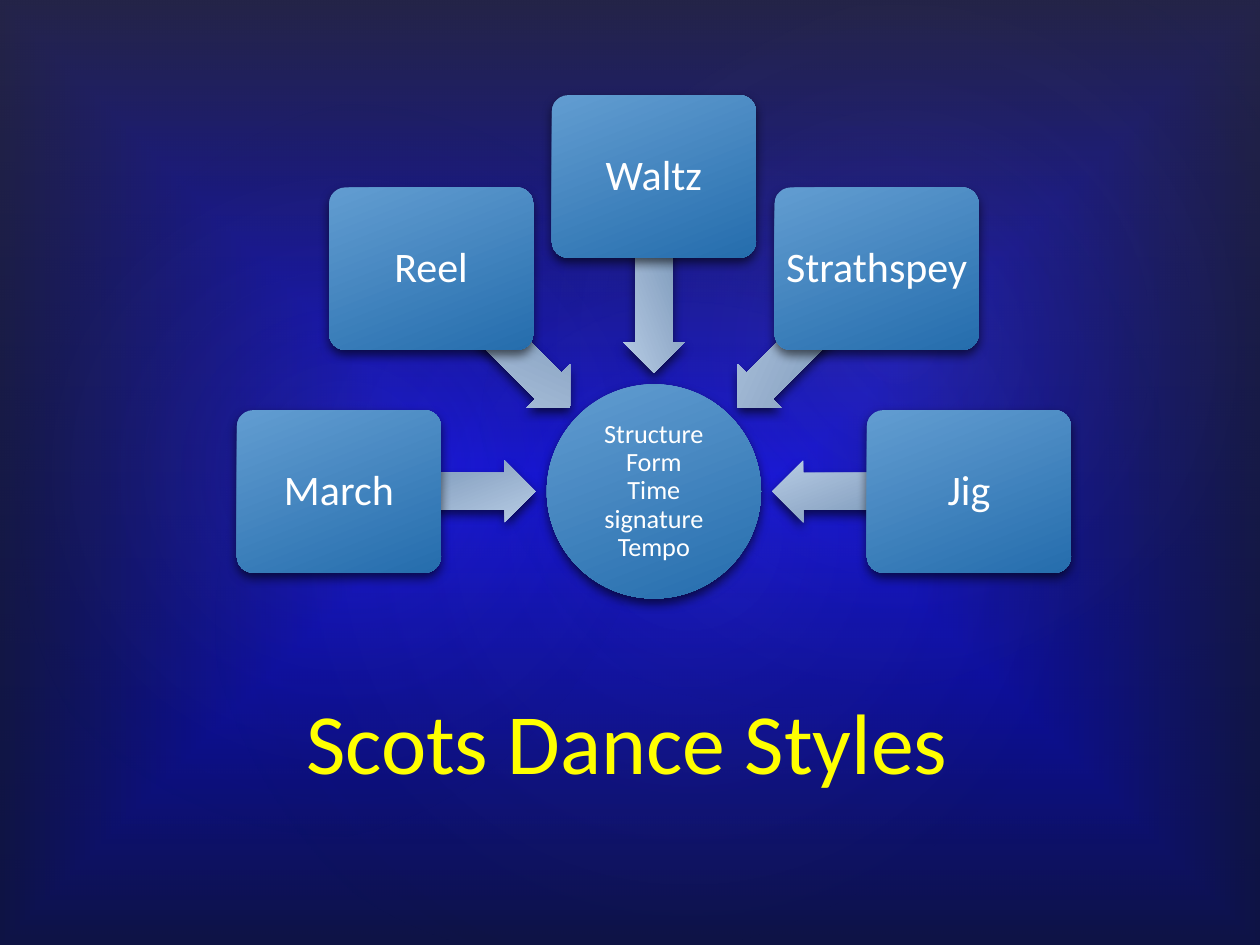
from math import cos, radians, sin

from lxml.etree import SubElement
from pptx import Presentation
from pptx.dml.color import RGBColor
from pptx.enum.shapes import MSO_SHAPE
from pptx.enum.text import MSO_ANCHOR, MSO_AUTO_SIZE, PP_ALIGN
from pptx.oxml import parse_xml
from pptx.oxml.ns import nsdecls, qn
from pptx.util import Inches, Pt

WHITE = RGBColor(0xFF, 0xFF, 0xFF)
YELLOW = RGBColor(0xFF, 0xFF, 0x00)
BLUE = RGBColor(0x00, 0x00, 0xFF)
NAVY = RGBColor(0x0C, 0x11, 0x43)
SLATE = RGBColor(0x24, 0x28, 0x52)
BROWN = RGBColor(0x50, 0x46, 0x52)
GLOW = RGBColor(0xC4, 0xBC, 0xC6)
BOX_LIGHT = RGBColor(0x62, 0x9D, 0xD1)
BOX_DARK = RGBColor(0x25, 0x6D, 0xAD)
ARROW_LIGHT = RGBColor(0xB7, 0xCC, 0xE5)
ARROW_DARK = RGBColor(0x6C, 0x8A, 0xAD)


def set_gradient(fill, parent, stops, angle=None, path=None):
    fill.solid()
    gs = "".join(
        f'<a:gs pos="{pos * 1000}"><a:srgbClr val="{color}">'
        f'<a:alpha val="{alpha * 1000}"/></a:srgbClr></a:gs>'
        for pos, color, alpha in stops
    )
    if path:
        kind = (f'<a:path path="{path}"><a:fillToRect l="50000" t="50000" '
                'r="50000" b="50000"/></a:path>')
    else:
        kind = f'<a:lin ang="{angle * 60000}" scaled="0"/>'
    grad = parse_xml(f'<a:gradFill {nsdecls("a")} rotWithShape="1">'
                     f'<a:gsLst>{gs}</a:gsLst>{kind}</a:gradFill>')
    parent.replace(parent.find(qn("a:solidFill")), grad)


def add_diagram_shape(kind, cx, cy, w, h, light, dark, text="", size=24, inset=0.05):
    sp = s.shapes.add_shape(kind, Inches(cx - w / 2), Inches(cy - h / 2), Inches(w), Inches(h))
    sp.line.fill.background()
    set_gradient(sp.fill, sp._element.spPr, [(0, light, 100), (100, dark, 100)], angle=69)
    effects = SubElement(sp._element.spPr, qn("a:effectLst"))
    shadow = SubElement(effects, qn("a:outerShdw"), blurRad=str(Pt(6)), dist=str(Pt(3)),
                        dir="5400000", algn="ctr", rotWithShape="0")
    black = SubElement(shadow, qn("a:srgbClr"), val="000000")
    SubElement(black, qn("a:alpha"), val="60000")
    if text:
        tf = sp.text_frame
        tf.word_wrap = True
        tf.vertical_anchor = MSO_ANCHOR.MIDDLE
        tf.margin_left = tf.margin_right = tf.margin_top = tf.margin_bottom = Inches(inset)
        p = tf.paragraphs[0]
        p.text = text
        p.alignment = PP_ALIGN.CENTER
        p.line_spacing = 0.9
        for r in p.runs:
            r.font.size = Pt(size)
            r.font.name = "Calibri"
            r.font.color.rgb = WHITE
    return sp


prs = Presentation()
prs.slide_width = Inches(10)
prs.slide_height = Inches(7.5)
s = prs.slides.add_slide(prs.slide_layouts[5])

bg_fill = s.background.fill
bg_fill.solid()
set_gradient(bg_fill, s._element.find(".//" + qn("p:bgPr")),
             [(0, BLUE, 100), (100, NAVY, 100)], path="shape")

veil = [(0, BROWN, 36), (100, SLATE, 10)]
glows = [
    (1.5, 1.14, 7.92, 6.24, 328.7, 7),
    (-0.3, 1.28, 6.06, 4.9, 294.3, 8),
    (3.58, 0.13, 7.09, 5.2, 328.7, 8),
]
sp = s.shapes.add_shape(MSO_SHAPE.RECTANGLE, 0, 0, prs.slide_width, prs.slide_height)
sp.shadow.inherit = False
sp.line.fill.background()
set_gradient(sp.fill, sp._element.spPr, veil, angle=90)
for x, y, w, h, rotation, alpha in glows:
    sp = s.shapes.add_shape(MSO_SHAPE.OVAL, Inches(x), Inches(y), Inches(w), Inches(h))
    sp.rotation = rotation
    sp.shadow.inherit = False
    sp.line.fill.background()
    set_gradient(sp.fill, sp._element.spPr, [(0, GLOW, alpha), (58, SLATE, 0)], path="circle")

hub_x, hub_y = 5.19, 3.9
box_radius, arrow_radius = 2.5, 1.72
add_diagram_shape(MSO_SHAPE.OVAL, hub_x, hub_y, 1.7, 1.7, BOX_LIGHT, BOX_DARK,
                  "Structure\vForm\vTime\vsignature\vTempo", 15, 0.01)

for i, dance in enumerate(["March", "Reel", "Waltz", "Strathspey", "Jig"]):
    angle = 180 + 45 * i
    dx, dy = cos(radians(angle)), sin(radians(angle))
    arrow = add_diagram_shape(MSO_SHAPE.LEFT_ARROW, hub_x + arrow_radius * dx,
                              hub_y + arrow_radius * dy, 1.56, 0.49, ARROW_LIGHT, ARROW_DARK)
    arrow.adjustments[0] = 0.6
    arrow.adjustments[1] = 0.5
    arrow.rotation = angle % 360
    box = add_diagram_shape(MSO_SHAPE.ROUNDED_RECTANGLE, hub_x + box_radius * dx,
                            hub_y + box_radius * dy, 1.62, 1.29, BOX_LIGHT, BOX_DARK, dance)
    box.adjustments[0] = 0.1

title = s.shapes.title
s.shapes._spTree.append(title._element)
title.left, title.top = Inches(0.85), Inches(5.33)
title.width, title.height = Inches(8.25), Inches(1)
tf = title.text_frame
tf.text = "Scots Dance Styles"
tf.auto_size = MSO_AUTO_SIZE.NONE
tf.vertical_anchor = MSO_ANCHOR.BOTTOM
p = tf.paragraphs[0]
p.alignment = PP_ALIGN.CENTER
r = p.runs[0]
r.font.size = Pt(49)
r.font.name = "Calibri"
r.font.color.rgb = YELLOW

prs.save("out.pptx")
